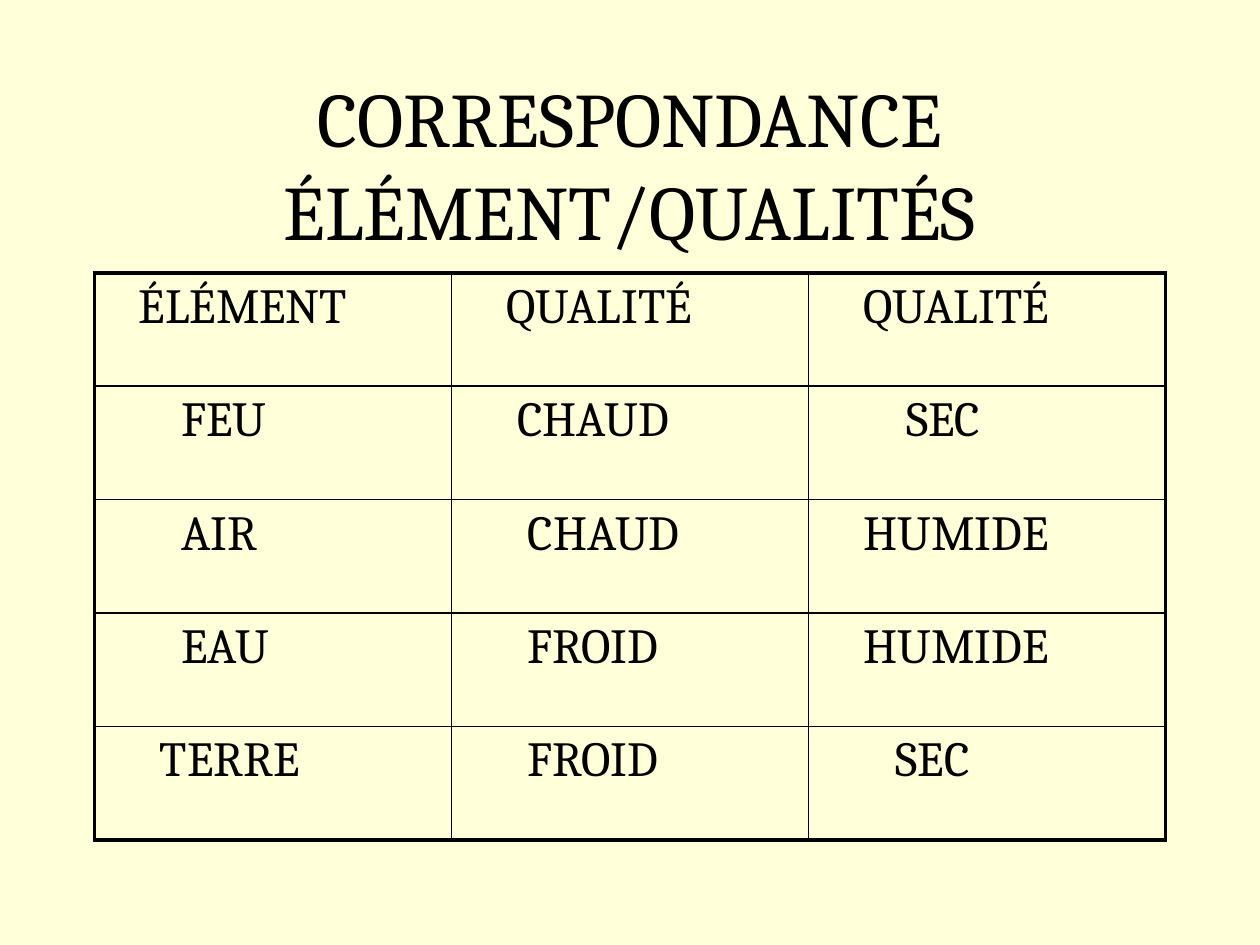
from dataclasses import dataclass

from lxml.etree import SubElement
from pptx import Presentation
from pptx.dml.color import RGBColor
from pptx.enum.text import MSO_ANCHOR, MSO_AUTO_SIZE, PP_ALIGN
from pptx.oxml.ns import qn
from pptx.util import Cm, Pt


@dataclass(frozen=True)
class Theme:
    font: str = "Cambria"
    ink: str = "000000"
    paper: str = "FFFFD9"
    title_size: int = 44
    cell_size: int = 28
    outer_line: float = 2.25
    inner_line: float = 1


theme = Theme()


def style_text(paragraph, size):
    paragraph.font.name = theme.font
    paragraph.font.size = Pt(size)
    paragraph.font.bold = False
    paragraph.font.color.rgb = RGBColor.from_string(theme.ink)


def add_border(cell, side, is_outer):
    width = Pt(theme.outer_line if is_outer else theme.inner_line)
    line = SubElement(cell._tc.get_or_add_tcPr(), qn(f"a:{side}"), w=str(width))
    SubElement(SubElement(line, qn("a:solidFill")), qn("a:srgbClr"), val=theme.ink)


presentation = Presentation()
presentation.slide_width, presentation.slide_height = Cm(25.4), Cm(19.05)
slide = presentation.slides.add_slide(presentation.slide_layouts[5])
slide.background.fill.solid()
slide.background.fill.fore_color.rgb = RGBColor.from_string(theme.paper)

heading = slide.shapes.title
heading.left, heading.top, heading.width, heading.height = Cm(1.9), Cm(1.7), Cm(21.6), Cm(3.18)
heading.text_frame.text = "CORRESPONDANCE\vÉLÉMENT/QUALITÉS"
heading.text_frame.auto_size = MSO_AUTO_SIZE.NONE
heading.text_frame.vertical_anchor = MSO_ANCHOR.MIDDLE
heading.text_frame.paragraphs[0].alignment = PP_ALIGN.CENTER
style_text(heading.text_frame.paragraphs[0], theme.title_size)

indent_step = 0.214
correspondences = [
    [("ÉLÉMENT", 3), ("QUALITÉ", 4), ("QUALITÉ", 4)],
    [("FEU", 7), ("CHAUD", 5), ("SEC", 8)],
    [("AIR", 7), ("CHAUD", 6), ("HUMIDE", 4)],
    [("EAU", 7), ("FROID", 6), ("HUMIDE", 4)],
    [("TERRE", 5), ("FROID", 6), ("SEC", 7)],
]
last_row = len(correspondences) - 1
last_column = len(correspondences[0]) - 1

qualities = slide.shapes.add_table(
    last_row + 1, last_column + 1, Cm(1.9), Cm(5.5), Cm(21.6), Cm(11.43)
).table
qualities.first_row = False
qualities.horz_banding = False

for row, entries in enumerate(correspondences):
    for column, (word, steps) in enumerate(entries):
        cell = qualities.cell(row, column)
        cell.text = word
        paragraph = cell.text_frame.paragraphs[0]
        paragraph.alignment = PP_ALIGN.LEFT
        paragraph._p.get_or_add_pPr().set("marL", str(Cm(steps * indent_step)))
        style_text(paragraph, theme.cell_size)
        add_border(cell, "lnL", column == 0)
        add_border(cell, "lnR", column == last_column)
        add_border(cell, "lnT", row == 0)
        add_border(cell, "lnB", row == last_row)
        cell.fill.background()

presentation.save("out.pptx")
